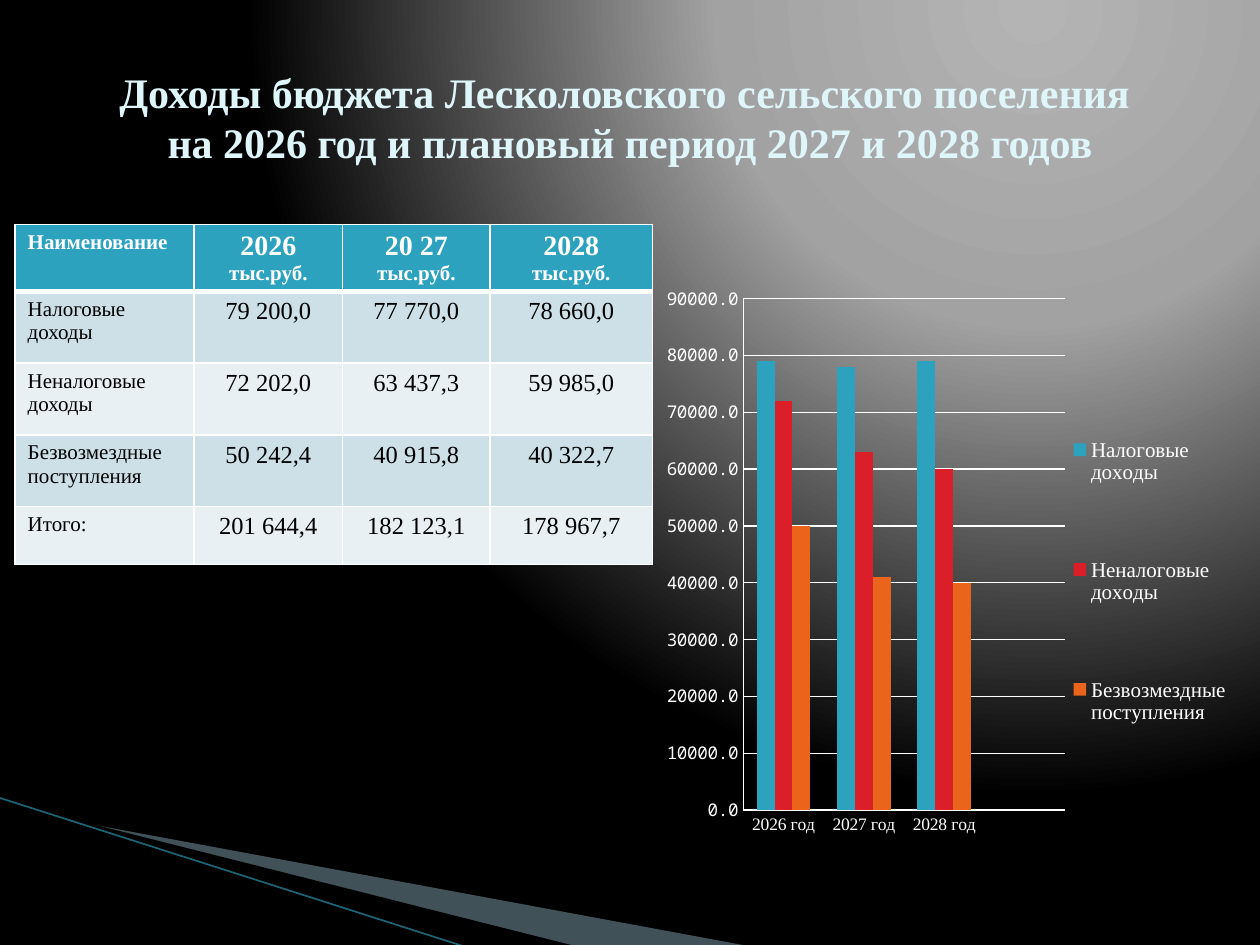
from lxml.etree import SubElement
from pptx import Presentation
from pptx.chart.data import CategoryChartData
from pptx.dml.color import RGBColor
from pptx.enum.chart import XL_CHART_TYPE as ChartType, XL_LEGEND_POSITION as LegendPos, XL_TICK_MARK as Tick
from pptx.enum.shapes import MSO_CONNECTOR as Connector
from pptx.enum.text import MSO_ANCHOR as Anchor, PP_ALIGN as Align
from pptx.oxml import parse_xml
from pptx.oxml.ns import nsdecls, qn
from pptx.util import Inches, Pt

COLORS = {
    "white": "FFFFFF", "black": "000000", "title": "DEF5FA",
    "tax": "2DA2BF", "nontax": "DA1F28", "grants": "EB641B",
    "odd_row": "CDE0E8", "even_row": "E8F0F4",
    "wedge": "A0CBDC", "stripe": "1C6577",
}
BACKDROP = [(0, "B4B4B4"), (40, "A2A2A2"), (100, "000000")]
SERIF, MONO = "Times New Roman", "Noto Sans Mono"

YEARS = [("2026 ", "2026 год"), ("20 27 ", "2027 год"), ("2028 ", "2028 год")]
INCOME = [
    ("Налоговые доходы", "tax", [79200.0, 77770.0, 78660.0]),
    ("Неналоговые доходы", "nontax", [72202.0, 63437.3, 59985.0]),
    ("Безвозмездные поступления", "grants", [50242.4, 40915.8, 40322.7]),
]


def rgb(name):
    return RGBColor.from_string(COLORS[name])


def style_font(font, size, color="white", face=SERIF, bold=False):
    font.size, font.name, font.bold = Pt(size), face, bold
    font.color.rgb = rgb(color)


def write(paragraph, text, align=Align.LEFT, **style):
    """Append text to a paragraph, with line breaks kept and one format."""
    paragraph.alignment = align
    for number, line in enumerate(text.split("\n")):
        if number:
            paragraph.add_line_break()
        run = paragraph.add_run()
        run.text = line
        style_font(run.font, **style)


def money(value):
    return f"{value:,.1f}".replace(",", " ").replace(".", ",")


class BudgetSlide:
    """Holds the slide and draws each kind of element in its style."""

    def __init__(self, deck):
        self.slide = deck.slides.add_slide(deck.slide_layouts[6])
        self.shapes = self.slide.shapes

    def backdrop(self, stops):
        self.slide.background.fill.gradient()
        gradient = self.slide.element.find(".//" + qn("a:gradFill"))
        for child in list(gradient):
            gradient.remove(child)
        stop_list = SubElement(gradient, qn("a:gsLst"))
        for position, color in stops:
            stop = SubElement(stop_list, qn("a:gs"), pos=str(position * 1000))
            SubElement(stop, qn("a:srgbClr"), val=color)
        circle = SubElement(gradient, qn("a:path"), {"path": "circle"})
        SubElement(circle, qn("a:fillToRect"), l="65000", t="0", r="0", b="98000")

    def wedge(self, points, color, opacity=100):
        start, *rest = [(Inches(x), Inches(y)) for x, y in points]
        builder = self.shapes.build_freeform(*start)
        builder.add_line_segments(rest, close=True)
        wedge = builder.convert_to_shape()
        wedge.shadow.inherit = False
        wedge.line.fill.background()
        wedge.fill.solid()
        wedge.fill.fore_color.rgb = rgb(color)
        if opacity < 100:
            tint = wedge.element.spPr.find(".//" + qn("a:srgbClr"))
            SubElement(tint, qn("a:alpha"), val=str(opacity * 1000))

    def stripe(self, start, end, color, width):
        ends = [Inches(length) for length in (*start, *end)]
        stripe = self.shapes.add_connector(Connector.STRAIGHT, *ends)
        stripe.line.color.rgb = rgb(color)
        stripe.line.width = Pt(width)
        SubElement(stripe.element.spPr, qn("a:effectLst"))

    def title(self, text, left, top, width, height):
        box = self.shapes.add_textbox(Inches(left), Inches(top), Inches(width), Inches(height))
        frame = box.text_frame
        frame.word_wrap = True
        frame.vertical_anchor = Anchor.MIDDLE
        write(frame.paragraphs[0], text, Align.CENTER, size=24, color="title", bold=True)

    def cell(self, cell, pieces, fill, bottom=1, **style):
        properties = cell._tc.get_or_add_tcPr()
        for side, width in (("L", 1), ("R", 1), ("T", 1), ("B", bottom)):
            properties.append(parse_xml(
                f'<a:ln{side} {nsdecls("a")} w="{Pt(width)}"><a:solidFill>'
                f'<a:srgbClr val="{COLORS["white"]}"/></a:solidFill></a:ln{side}>'))
        cell.fill.solid()
        cell.fill.fore_color.rgb = rgb(fill)
        for text, size in pieces:
            write(cell.text_frame.paragraphs[0], text, size=size, **style)

    def table(self, left, top, widths, heights):
        table = self.shapes.add_table(
            len(heights), len(widths), Inches(left), Inches(top),
            Inches(sum(widths)), Inches(sum(heights))).table
        for column, width in zip(table.columns, widths):
            column.width = Inches(width)
        for row, height in zip(table.rows, heights):
            row.height = Inches(height)
        header = dict(fill="tax", bottom=3, bold=True)
        self.cell(table.cell(0, 0), [("Наименование", 12)], **header)
        for column, (year, _) in enumerate(YEARS, 1):
            self.cell(table.cell(0, column), [(year, 16), ("тыс.руб.", 12)],
                      align=Align.CENTER, **header)
        totals = [sum(year) for year in zip(*(values for _, _, values in INCOME))]
        for row, (name, _, values) in enumerate([*INCOME, ("Итого:", "", totals)], 1):
            body = dict(fill="odd_row" if row % 2 else "even_row", color="black")
            self.cell(table.cell(row, 0), [(name, 12)], **body)
            for column, value in enumerate(values, 1):
                self.cell(table.cell(row, column), [(money(value), 14)],
                          align=Align.CENTER, **body)

    def chart(self, left, top, width, height, plot, legend):
        data = CategoryChartData(number_format="0.0")
        data.categories = [label for _, label in YEARS] + [""]
        for name, _, values in INCOME:
            data.add_series(name, [round(value, -3) for value in values] + [None])
        chart = self.shapes.add_chart(
            ChartType.COLUMN_CLUSTERED, Inches(left), Inches(top),
            Inches(width), Inches(height), data).chart
        style_font(chart.font, 18, face=MONO)
        chart.has_title = False
        chart.has_legend = True
        chart.legend.position = LegendPos.RIGHT
        chart.legend.include_in_layout = False
        style_font(chart.legend.font, 12)
        columns = chart.plots[0]
        columns.gap_width, columns.overlap = 150, 0
        columns.vary_by_categories = False
        for series, (_, color, _) in zip(columns.series, INCOME):
            series.format.fill.solid()
            series.format.fill.fore_color.rgb = rgb(color)
        years, amounts = chart.category_axis, chart.value_axis
        for axis, face in ((years, SERIF), (amounts, MONO)):
            axis.major_tick_mark = axis.minor_tick_mark = Tick.NONE
            axis.format.line.color.rgb = rgb("white")
            style_font(axis.tick_labels.font, 10, face=face)
        amounts.minimum_scale, amounts.maximum_scale, amounts.major_unit = 0, 90000, 10000
        amounts.tick_labels.number_format = "0.0"
        amounts.tick_labels.number_format_is_linked = False
        amounts.major_gridlines.format.line.color.rgb = rgb("white")
        size = (width, height, width, height)
        self.place(chart, "plotArea", 0, plot, size, [("layoutTarget", "inner")])
        self.place(chart, "legend", 1, legend, size, [])

    def place(self, chart, part, index, box, size, settings):
        area = chart.element.find(".//" + qn(f"c:{part}"))
        for old in area.findall(qn("c:layout")):
            area.remove(old)
        shares = [length / whole for length, whole in zip(box, size)]
        settings = [*settings, ("xMode", "edge"), ("yMode", "edge"), *zip("xywh", shares)]
        parts = "".join(f'<c:{tag} val="{value}"/>' for tag, value in settings)
        area.insert(index, parse_xml(
            f'<c:layout {nsdecls("c")}><c:manualLayout>{parts}</c:manualLayout></c:layout>'))


def main():
    deck = Presentation()
    deck.slide_width, deck.slide_height = Inches(10), Inches(7.5)
    budget = BudgetSlide(deck)
    budget.backdrop(BACKDROP)
    budget.wedge([(0.55, 6.51), (5.95, 7.51), (4.56, 7.51), (0.55, 6.5)], "wedge", opacity=40)
    budget.wedge([(0.53, 6.49), (4.57, 7.51), (3.72, 7.52), (0.54, 6.5)], "black")
    budget.stripe((-0.01, 6.33), (3.71, 7.52), "stripe", 0.95)
    budget.table(0.12, 1.78, [1.42, 1.18, 1.17, 1.29], [0.46, 0.57, 0.57, 0.57, 0.46])
    budget.chart(5.24, 1.75, 4.6, 5.17, plot=(0.66, 0.62, 2.55, 4.06),
                 legend=(3.22, 1.14, 1.33, 3.45))
    budget.title("Доходы бюджета Лесколовского сельского поселения \n"
                 "на 2026 год и плановый период 2027 и 2028 годов", 0.5, 0.3, 9, 1.25)
    deck.save("out.pptx")


if __name__ == "__main__":
    main()
